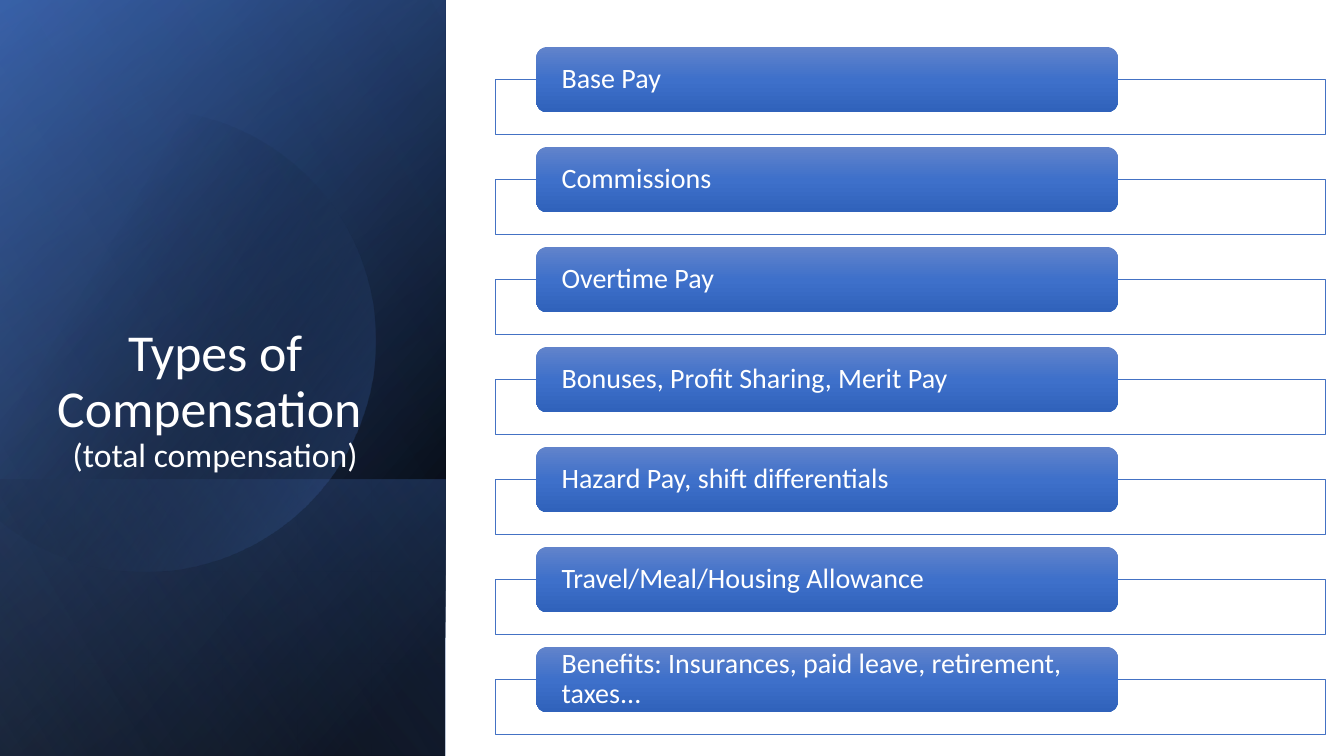
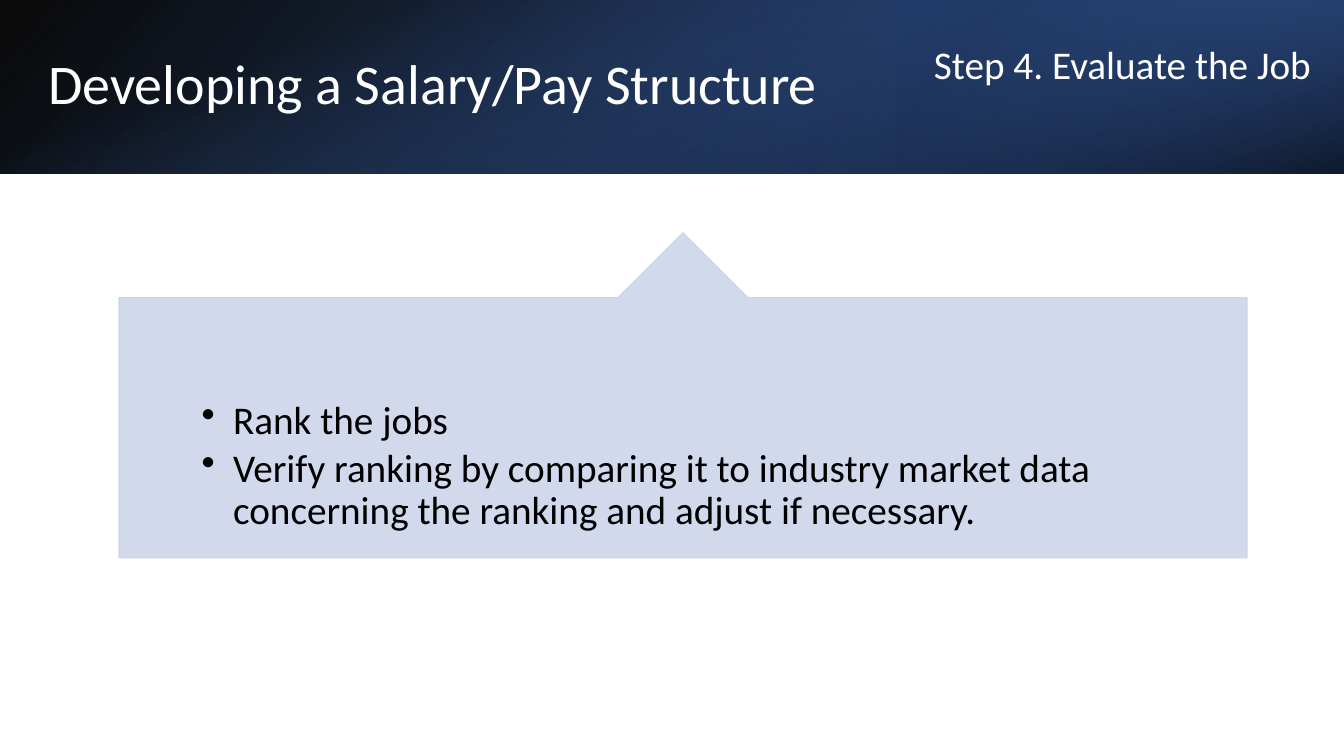
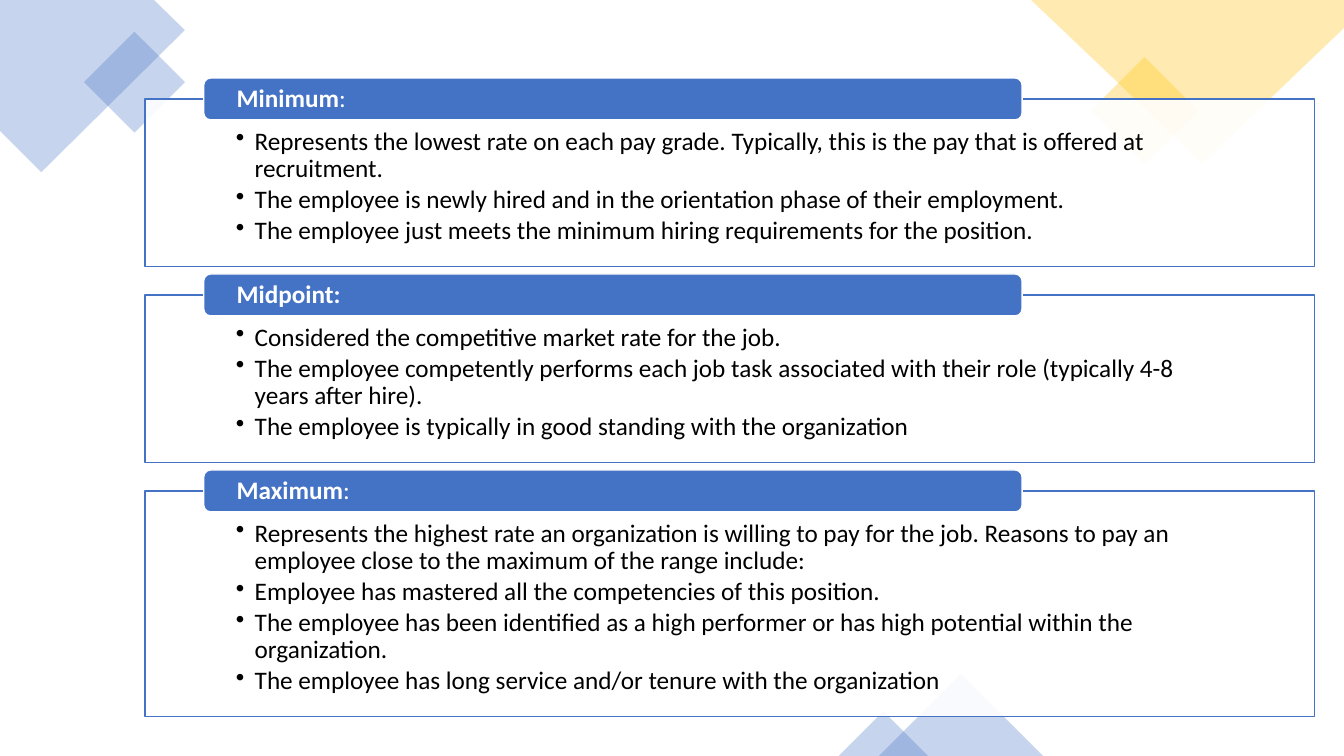
import math

import lxml.etree
import pptx
import pptx.dml.color
import pptx.enum.shapes
import pptx.enum.text
import pptx.oxml.ns
import pptx.util

Pt = pptx.util.Pt
RGBColor = pptx.dml.color.RGBColor
SHAPE = pptx.enum.shapes.MSO_SHAPE
ANCHOR = pptx.enum.text.MSO_ANCHOR
ALIGN = pptx.enum.text.PP_ALIGN
qn = pptx.oxml.ns.qn

BLACK = RGBColor(0x00, 0x00, 0x00)
WHITE = RGBColor(0xFF, 0xFF, 0xFF)
BLUE = RGBColor(0x44, 0x72, 0xC4)
DEEP_BLUE = RGBColor(0x2F, 0x55, 0x97)
NAVY = RGBColor(0x20, 0x38, 0x64)
SKY = RGBColor(0x8F, 0xAA, 0xDC)
LAVENDER = RGBColor(0xCF, 0xD5, 0xEA)
GOLD = RGBColor(0xFF, 0xC0, 0x00)
CHIP_TOP = RGBColor(0x61, 0x83, 0xCB)
CHIP_MIDDLE = RGBColor(0x3E, 0x70, 0xCA)
CHIP_BOTTOM = RGBColor(0x30, 0x62, 0xBB)

WIDTH, HEIGHT = 960, 540


class Deck:
    """Holds the shared style and the current slide, and draws each kind of element."""

    font = "Calibri"
    line_spacing = 0.9

    def __init__(self):
        self.prs = pptx.Presentation()
        self.prs.slide_width, self.prs.slide_height = Pt(WIDTH), Pt(HEIGHT)
        self.slide = None

    def new_slide(self):
        self.slide = self.prs.slides.add_slide(self.prs.slide_layouts[6])

    def colour_element(self, parent, colour, alpha):
        clr = lxml.etree.SubElement(parent, qn("a:srgbClr"), val=str(colour))
        lxml.etree.SubElement(clr, qn("a:alpha"), val=str(alpha * 1000))

    def paint(self, shape, fill, alpha=100, line=None, line_width=1):
        shape.shadow.inherit = False
        shape.fill.solid()
        shape.fill.fore_color.rgb = fill
        if alpha < 100:
            solid = shape._element.spPr.find(qn("a:solidFill"))
            solid.remove(solid[0])
            self.colour_element(solid, fill, alpha)
        if line is None:
            shape.line.fill.background()
        else:
            shape.line.color.rgb = line
            shape.line.width = Pt(line_width)

    def gradient(self, shape, angle, stops):
        self.paint(shape, BLUE)
        props = shape._element.spPr
        grad = lxml.etree.Element(qn("a:gradFill"), rotWithShape="1")
        stop_list = lxml.etree.SubElement(grad, qn("a:gsLst"))
        for position, colour, alpha in stops:
            stop = lxml.etree.SubElement(stop_list, qn("a:gs"), pos=str(position * 1000))
            self.colour_element(stop, colour, alpha)
        lxml.etree.SubElement(grad, qn("a:lin"), ang=str(angle * 60000), scaled="0")
        props.replace(props.find(qn("a:solidFill")), grad)

    def shape(self, kind, left, top, width, height):
        return self.slide.shapes.add_shape(kind, Pt(left), Pt(top), Pt(width), Pt(height))

    def band(self, left, top, width, height, angle, stops, turn=0, flip=True):
        if turn % 180:
            left, top = left + (width - height) / 2, top + (height - width) / 2
            width, height = height, width
        band = self.shape(SHAPE.RECTANGLE, left, top, width, height)
        band.rotation = turn
        if flip:
            band._element.spPr.find(qn("a:xfrm")).set("flipH", "1")
        self.gradient(band, angle, stops)

    def outline(self, points):
        corners = [(Pt(x), Pt(y)) for x, y in points]
        builder = self.slide.shapes.build_freeform(*corners[0])
        builder.add_line_segments(corners[1:], close=True)
        return builder.convert_to_shape()

    def fill_text(self, shape, paragraphs, colour, insets=(7.2, 3.6, 7.2, 3.6),
                  anchor=ANCHOR.MIDDLE, align=ALIGN.LEFT, after=0, bullet_indent=0):
        frame = shape.text_frame
        frame.word_wrap = True
        frame.vertical_anchor = anchor
        (frame.margin_left, frame.margin_top,
         frame.margin_right, frame.margin_bottom) = map(Pt, insets)
        for index, runs in enumerate(paragraphs):
            paragraph = frame.add_paragraph() if index else frame.paragraphs[0]
            paragraph.alignment = align
            paragraph.line_spacing = self.line_spacing
            paragraph.space_after = Pt(after)
            if bullet_indent:
                props = paragraph._p.get_or_add_pPr()
                props.set("marL", str(Pt(bullet_indent)))
                props.set("indent", str(-Pt(bullet_indent)))
                lxml.etree.SubElement(props, qn("a:buChar"), char="•")
            for text, size, bold in runs:
                if text == "\n":
                    paragraph.add_line_break()
                    continue
                run = paragraph.add_run()
                run.text = text
                run.font.name = self.font
                run.font.size = Pt(size)
                run.font.bold = bold
                run.font.color.rgb = colour

    def text(self, left, top, width, height, paragraphs, colour=WHITE, **style):
        box = self.slide.shapes.add_textbox(Pt(left), Pt(top), Pt(width), Pt(height))
        self.fill_text(box, paragraphs, colour, **style)

    def panel(self, left, top, width, height, line_width):
        panel = self.shape(SHAPE.RECTANGLE, left, top, width, height)
        self.paint(panel, WHITE, 90, BLUE, line_width)
        return panel

    def chip(self, left, top, width, height, runs, inset):
        chip = self.shape(SHAPE.ROUNDED_RECTANGLE, left, top, width, height)
        self.paint(chip, BLUE, line=WHITE)
        self.fill_text(chip, [runs], WHITE, (inset, 0, inset, 0))
        return chip


def compensation_types(deck):
    """Builds the list of compensation types beside a dark side bar."""
    deck.new_slide()
    side = 318.2
    deck.band(0, 0, side, HEIGHT, 50, [(8, BLACK, 100), (100, DEEP_BLUE, 100)], 90)
    deck.band(0, 0, side, HEIGHT, 30, [(0, BLACK, 0), (99, BLUE, 46)], 90)
    deck.band(0, 342.7, side, 197.3, 130, [(2, BLUE, 29), (100, BLACK, 30)], 90)
    centre_x, centre_y, radius = 103.5, 243.5, 165
    reach = math.acos(-centre_x / radius)
    steps = 90
    angles = [reach * (2 * step / steps - 1) for step in range(steps + 1)]
    disc = deck.outline([(centre_x + radius * math.cos(a), centre_y + radius * math.sin(a))
                         for a in angles])
    deck.gradient(disc, 30, [(29, BLACK, 0), (100, BLUE, 43)])
    deck.band(0, 0, side, HEIGHT, 120, [(0, BLACK, 0), (99, SKY, 11)], 90)
    deck.text(0, 91.4, 307.4, 251.3,
              [[("Types of Compensation ", 37, False), ("\n", 37, False),
                ("(total compensation)", 24, False)]],
              anchor=ANCHOR.BOTTOM, align=ALIGN.CENTER)

    pay_types = ["Base Pay", "Commissions", "Overtime Pay",
                 "Bonuses, Profit Sharing, Merit Pay",
                 "Hazard Pay, shift differentials",
                 "Travel/Meal/Housing Allowance",
                 "Benefits: Insurances, paid leave, retirement, taxes..."]
    for row, pay_type in enumerate(pay_types):
        top = 33.6 + row * 71.42
        deck.panel(353.5, top + 23, 593.4, 39.7, 0.5)
        chip = deck.chip(383.1, top, 415.4, 46.5, [(pay_type, 20, False)], 15.8)
        deck.gradient(chip, 90, [(0, CHIP_TOP, 100), (50, CHIP_MIDDLE, 100),
                                 (100, CHIP_BOTTOM, 100)])


def evaluate_job(deck):
    """Builds the job evaluation step with its callout."""
    deck.new_slide()
    header = 124
    deck.band(0, 0, WIDTH, header, 140, [(0, BLACK, 96), (100, DEEP_BLUE, 100)])
    deck.band(640, 0, 320, header, 320, [(19, NAVY, 68), (100, BLUE, 79)], 180)
    deck.band(0, 0, WIDTH, header, 340, [(23, BLUE, 0), (99, BLACK, 74)], 90, False)
    deck.text(27.4, 27.4, 620, 69, [[("Developing a Salary/Pay Structure", 40, False)]])

    callout = deck.shape(SHAPE.UP_ARROW_CALLOUT, 85, 166.3, 805.7, 232)
    for index, ratio in enumerate((0.5, 0.2, 0.2, 1)):
        callout.adjustments[index] = ratio
    deck.paint(callout, LAVENDER, 90, LAVENDER)
    actions = ["Rank the jobs",
               "Verify ranking by comparing it to industry market data "
               "concerning the ranking and adjust if necessary."]
    deck.text(85, 286, 805.7, 112, [[(action, 28, False)] for action in actions],
              BLACK, insets=(59, 0, 59, 0), anchor=ANCHOR.TOP, after=4.2, bullet_indent=22.5)
    deck.text(660, 27.4, 300, 41, [[("Step 4. Evaluate the Job", 28, False)]])


def pay_range(deck):
    """Builds the three points of a pay range over pale diamonds."""
    deck.new_slide()
    blue_corner = [(0, 0), (110, 0), (132, 21.5), (29.5, 123), (0, 93.5)]
    gold_corner = [(736.5, 0), (WIDTH, 0), (WIDTH, 20), (859, 116.6)]
    deck.paint(deck.outline(blue_corner), BLUE, 30)
    for left, top, size, colour in ((70.6, 33.2, 51, BLUE), (790.6, 51.8, 54, GOLD)):
        diamond = deck.shape(SHAPE.RECTANGLE, left, top, size, size)
        diamond.rotation = 315
        deck.paint(diamond, colour, 30)
    deck.paint(deck.outline(gold_corner), GOLD, 30)
    for left, width in ((627.8, 117.4), (599, 64)):
        peak = deck.shape(SHAPE.ISOSCELES_TRIANGLE, left, HEIGHT - width / 2, width, width / 2)
        deck.paint(peak, BLUE, 30)

    levels = [
        ([("Minimum", 18, True), (":", 18, False)], 119.5,
         ["Represents the lowest rate on each pay grade. Typically, this is the pay "
          "that is offered at recruitment.",
          "The employee is newly hired and in the orientation phase of their employment.",
          "The employee just meets the minimum hiring requirements for the position."]),
        ([("Midpoint:", 18, True)], 119.5,
         ["Considered the competitive market rate for the job.",
          "The employee competently performs each job task associated with their role "
          "(typically 4-8 years after hire).",
          "The employee is typically in good standing with the organization"]),
        ([("Maximum", 18, True), (":", 18, False)], 161.3,
         ["Represents the highest rate an organization is willing to pay for the job. "
          "Reasons to pay an employee close to the maximum of the range include:",
          "Employee has mastered all the competencies of this position.",
          "The employee has been identified as a high performer or has high potential "
          "within the organization.",
          "The employee has long service and/or tenure with the organization"]),
    ]
    top = 70.7
    for heading, height, points in levels:
        panel = deck.panel(103.7, top, 835.2, height, 1)
        deck.fill_text(panel, [[(point, 18, False)] for point in points], BLACK,
                       (64.8, 21.3, 64.8, 10), ANCHOR.TOP, after=2.7, bullet_indent=13.5)
        deck.chip(145.5, top - 15, 584.6, 30, heading, 22.1)
        top += height + 20.5


def main():
    """Builds and saves the deck."""
    deck = Deck()
    compensation_types(deck)
    evaluate_job(deck)
    pay_range(deck)
    deck.prs.save("out.pptx")


if __name__ == "__main__":
    main()
